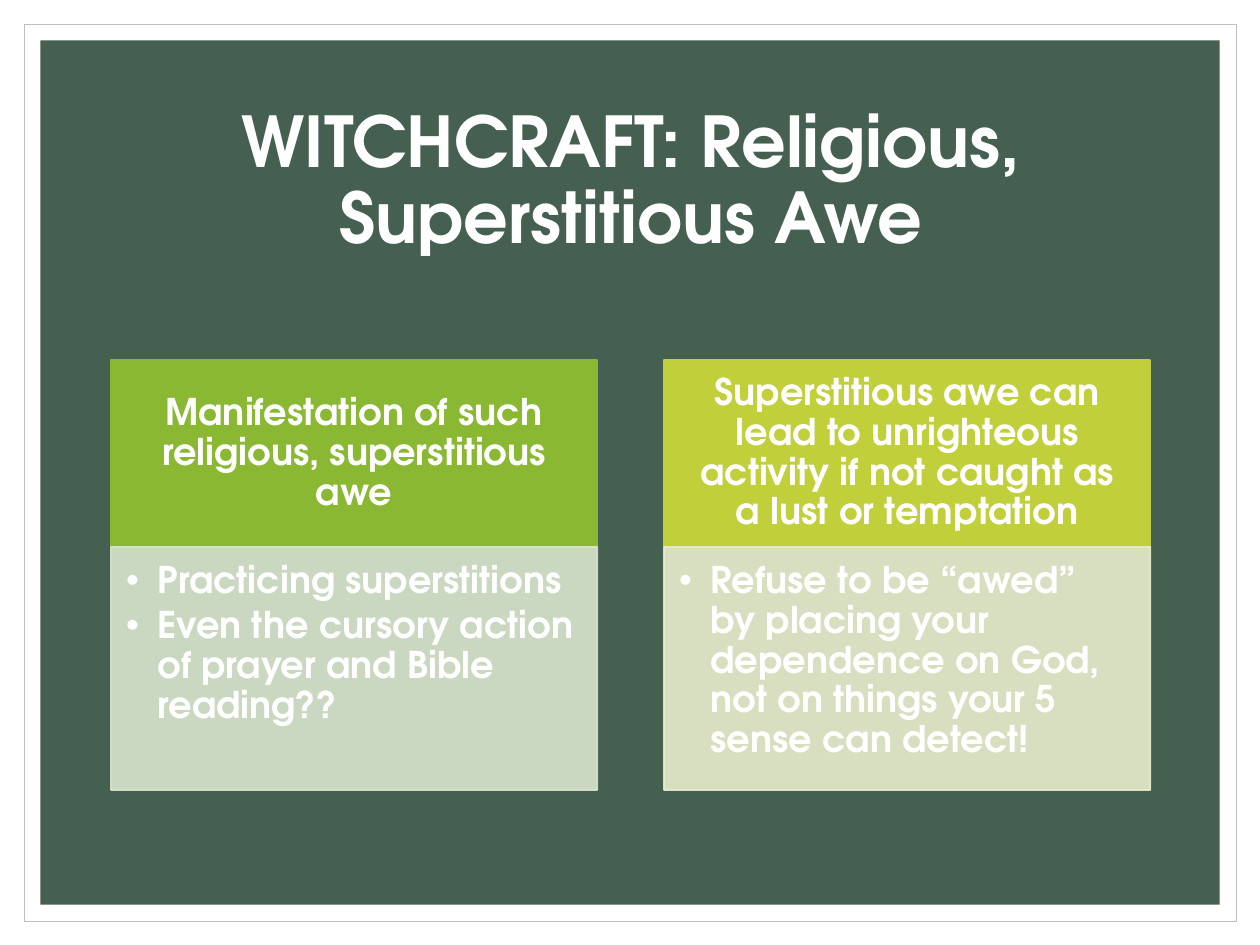
from dataclasses import dataclass

from lxml import etree
from pptx import Presentation
from pptx.dml.color import RGBColor
from pptx.enum import shapes, text
from pptx.oxml import ns
from pptx.util import Pt

PX = 9144
FONT = "TeX Gyre Adventor"
WHITE = RGBColor(0xFF, 0xFF, 0xFF)
SILVER = RGBColor(0xBF, 0xBF, 0xBF)
FOREST = RGBColor(0x45, 0x5F, 0x51)
GREEN = RGBColor(0x8A, 0xB8, 0x33)
LIME = RGBColor(0xC0, 0xCF, 0x3A)
PALE_GREEN = RGBColor(0xDA, 0xE6, 0xCE)
PALE_LIME = RGBColor(0xE8, 0xED, 0xCE)

LEFT, COLUMN_WIDTH, COLUMN_STEP = 88, 386, 439
HEADING_TOP, HEADING_HEIGHT, LIST_HEIGHT = 286, 148, 193


@dataclass(frozen=True)
class Column:
    heading: str
    items: tuple[str, ...]
    color: RGBColor
    pale: RGBColor


@dataclass(frozen=True)
class Style:
    size: int
    align: text.PP_ALIGN
    anchor: text.MSO_ANCHOR
    margins: tuple[int, int, int, int]
    space_after: int = 0
    indent: int = 0


TITLE = Style(40, text.PP_ALIGN.CENTER, text.MSO_ANCHOR.MIDDLE, (10, 5, 10, 5))
HEADING = Style(21, text.PP_ALIGN.CENTER, text.MSO_ANCHOR.MIDDLE, (16, 9, 16, 9), 7)
LIST = Style(21, text.PP_ALIGN.LEFT, text.MSO_ANCHOR.TOP, (12, 12, 16, 18), 3, 25)

COLUMNS = (
    Column(
        "Manifestation of such religious, superstitious awe",
        (
            "Practicing superstitions",
            "Even the cursory action of prayer and Bible reading??",
        ),
        GREEN,
        PALE_GREEN,
    ),
    Column(
        "Superstitious awe can lead to unrighteous activity "
        "if not caught as a lust or temptation",
        (
            "Refuse to be “awed” by placing your dependence on God, "
            "not on things your 5 sense can detect!",
        ),
        LIME,
        PALE_LIME,
    ),
)


def place(box, left: int, top: int, width: int, height: int) -> None:
    box.left, box.top = left * PX, top * PX
    box.width, box.height = width * PX, height * PX


def write(box, lines: tuple[str, ...], style: Style) -> None:
    frame = box.text_frame
    frame.text = "\n".join(lines)
    frame.word_wrap = True
    frame.auto_size = text.MSO_AUTO_SIZE.NONE
    frame.vertical_anchor = style.anchor
    (frame.margin_left, frame.margin_top,
     frame.margin_right, frame.margin_bottom) = (m * PX for m in style.margins)
    for para in frame.paragraphs:
        para.alignment = style.align
        para.line_spacing = 0.9
        para.space_before = Pt(0)
        para.space_after = Pt(style.space_after)
        para.font.name = FONT
        para.font.size = Pt(style.size)
        para.font.bold = True
        para.font.color.rgb = WHITE
        properties = para._p.get_or_add_pPr()
        properties.set("marL", str(style.indent * PX))
        properties.set("indent", str(-style.indent * PX))


def paint(box, color: RGBColor, opacity: int = 100) -> None:
    box.fill.solid()
    box.fill.fore_color.rgb = color
    box.line.color.rgb = color
    box.line.width = Pt(1)
    if opacity < 100:
        for swatch in box.element.spPr.iter(ns.qn("a:srgbClr")):
            etree.SubElement(swatch, ns.qn("a:alpha"), val=str(opacity * 1000))


def add_frame(page, inset: int, width: int, height: int, color: RGBColor):
    frame = page.shapes.add_shape(
        shapes.MSO_SHAPE.RECTANGLE, inset * PX, inset * PX, width * PX, height * PX
    )
    frame.shadow.inherit = False
    frame.fill.solid()
    frame.fill.fore_color.rgb = color
    frame.line.fill.background()
    page.shapes.title.element.addprevious(frame.element)
    return frame


def draw_column(page, index: int, column: Column) -> None:
    left = LEFT + index * COLUMN_STEP
    heading = page.placeholders[1 + 2 * index]
    place(heading, left, HEADING_TOP, COLUMN_WIDTH, HEADING_HEIGHT)
    paint(heading, column.color)
    write(heading, (column.heading,), HEADING)
    body = page.placeholders[2 + 2 * index]
    place(body, left, HEADING_TOP + HEADING_HEIGHT, COLUMN_WIDTH, LIST_HEIGHT)
    paint(body, column.pale, 90)
    write(body, column.items, LIST)


def main() -> None:
    deck = Presentation()
    deck.slide_width, deck.slide_height = 1000 * PX, 750 * PX
    page = deck.slides.add_slide(deck.slide_layouts.get_by_name("Comparison"))
    border = add_frame(page, 19, 962, 712, WHITE)
    border.line.color.rgb = SILVER
    border.line.width = Pt(0.5)
    add_frame(page, 32, 936, 686, FOREST)
    place(page.shapes.title, LEFT, 70, 825, 150)
    write(page.shapes.title, ("WITCHCRAFT: Religious, Superstitious Awe",), TITLE)
    for index, column in enumerate(COLUMNS):
        draw_column(page, index, column)
    deck.save("out.pptx")


if __name__ == "__main__":
    main()
